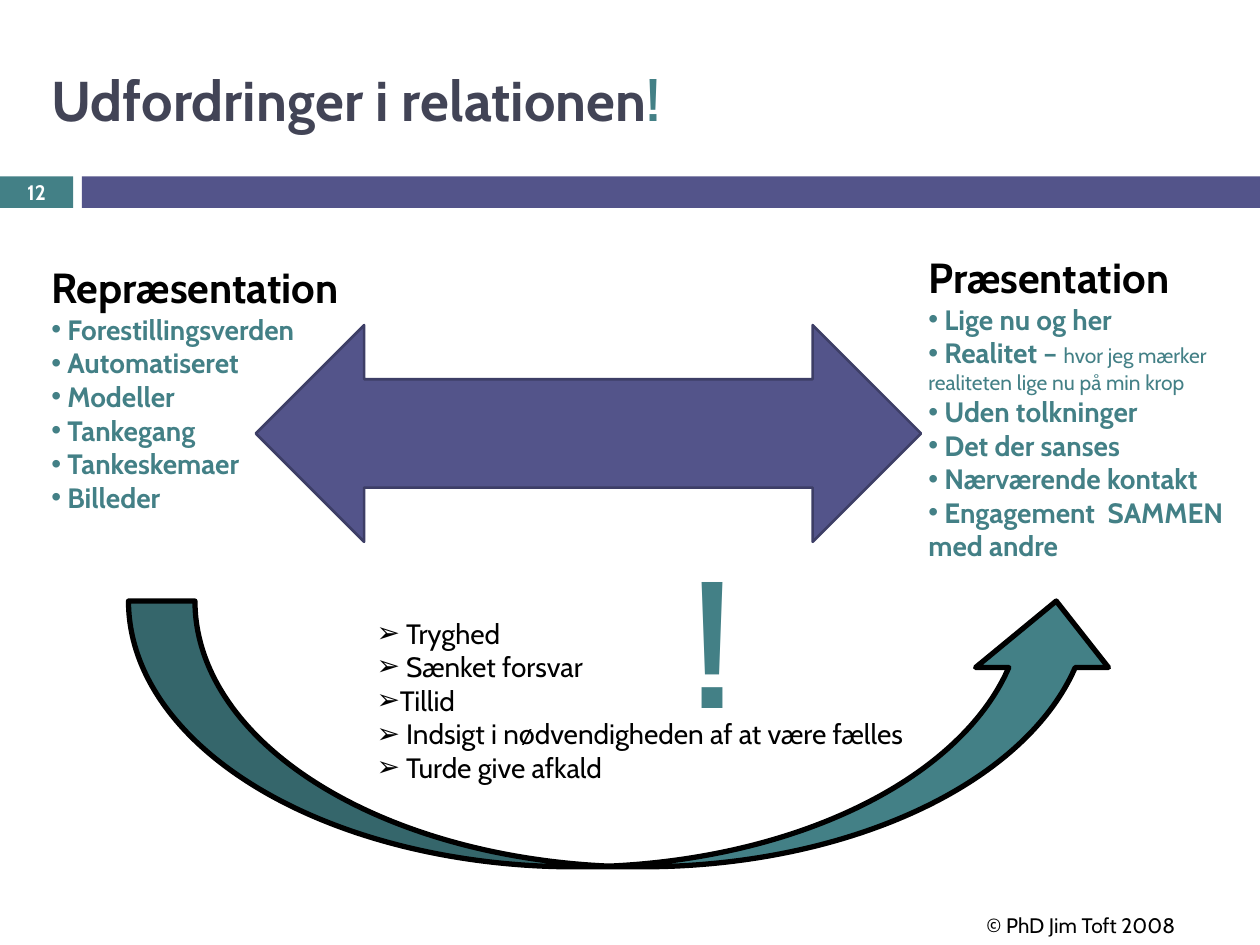
from dataclasses import dataclass

from lxml.etree import SubElement
from pptx import Presentation
from pptx.dml.color import RGBColor
from pptx.enum.shapes import MSO_SHAPE
from pptx.enum.text import MSO_ANCHOR, MSO_AUTO_SIZE, PP_ALIGN
from pptx.oxml.ns import qn
from pptx.util import Inches, Pt


@dataclass(frozen=True)
class Theme:
    font: str = "Cabin"
    teal: RGBColor = RGBColor.from_string("438086")
    violet: RGBColor = RGBColor.from_string("53548A")
    edge: RGBColor = RGBColor.from_string("3D3E66")
    ink: RGBColor = RGBColor.from_string("424456")
    black: RGBColor = RGBColor.from_string("000000")
    white: RGBColor = RGBColor.from_string("FFFFFF")
    title: Pt = Pt(32)
    head: Pt = Pt(24)
    body: Pt = Pt(16)
    small: Pt = Pt(12)
    mark: Pt = Pt(96)


theme = Theme()
title = dict(size=theme.title, bold=True, color=theme.ink)
accent = title | dict(color=theme.teal)
number = dict(size=theme.small, bold=True, color=theme.white)
head = dict(size=theme.head, bold=True, color=theme.black)
item = dict(size=theme.body, bold=True, color=theme.teal)
aside = dict(size=theme.small, bold=False, color=theme.teal)
point = dict(size=theme.body, bold=False, color=theme.black)
credit = point | dict(size=theme.small)
mark = item | dict(size=theme.mark)

deck = Presentation()
deck.slide_width, deck.slide_height = Inches(10), Inches(7.5)
slide = deck.slides.add_slide(deck.slide_layouts[6])
shapes = slide.shapes


def draw(kind, place, fill, line=None, width=0):
    shape = shapes.add_shape(kind, *map(Inches, place))
    shape.shadow.inherit = False
    shape.fill.solid()
    shape.fill.fore_color.rgb = fill
    if line is None:
        shape.line.fill.background()
    else:
        shape.line.color.rgb = line
        shape.line.width = Pt(width)
    return shape


def write(frame, lines, **look):
    """Fill a frame with lines, each a bullet (or None) and its (text, format) runs."""
    for name, value in (dict(word_wrap=True) | look).items():
        setattr(frame, name, value)
    for row, (bullet, runs) in enumerate(lines):
        para = frame.add_paragraph() if row else frame.paragraphs[0]
        if bullet:
            props = para._p.get_or_add_pPr()
            SubElement(props, qn("a:buFont"), typeface="Arial")
            SubElement(props, qn("a:buChar"), char=bullet)
        for text, style in runs:
            run = para.add_run()
            run.text = text
            run.font.name = theme.font
            for name, value in style.items():
                if name == "color":
                    run.font.color.rgb = value
                else:
                    setattr(run.font, name, value)


# Title band
badge = draw(MSO_SHAPE.RECTANGLE, (0, 1.4, 0.58, 0.25), theme.teal)
write(badge.text_frame, [(None, [("12", number)])], margin_top=0, margin_bottom=0,
      vertical_anchor=MSO_ANCHOR.MIDDLE)
badge.text_frame.paragraphs[0].alignment = PP_ALIGN.CENTER
draw(MSO_SHAPE.RECTANGLE, (0.65, 1.4, 9.35, 0.25), theme.violet)

box = shapes.add_textbox(*map(Inches, (0.31, 0.25, 9.45, 1.08)))
write(box.text_frame, [(None, [("Udfordringer i relationen", title), ("!", accent)])],
      vertical_anchor=MSO_ANCHOR.MIDDLE)

# Arrows; the straight one stops short of the right list's bullets
draw(MSO_SHAPE.LEFT_RIGHT_ARROW, (2.03, 2.58, 5.28, 1.72), theme.violet, theme.edge, 1.5)
draw(MSO_SHAPE.CURVED_UP_ARROW, (1.02, 4.77, 7.89, 2.11), theme.teal, theme.black, 3)

# Lists and notes
inner = ["Forestillingsverden", "Automatiseret", "Modeller", "Tankegang",
         "Tankeskemaer", "Billeder"]
outer = ["Uden tolkninger", "Det der sanses", "Nærværende kontakt",
         "Engagement  SAMMEN med andre"]
needs = [" Tryghed", " Sænket forsvar", "Tillid",
         " Indsigt i nødvendigheden af at være fælles", " Turde give afkald"]

left = [(None, [("Repræsentation", head)])]
left += [("•", [(f" {text}", item)]) for text in inner]
right = [
    (None, [("Præsentation", head)]),
    ("•", [(" Lige nu og her", item)]),
    ("•", [(" Realitet – ", item),
           ("hvor jeg mærker realiteten lige nu på min krop", aside)]),
]
right += [("•", [(f" {text}", item)]) for text in outer]

# The large mark stands clear above the long line of needs
texts = [
    ((0.31, 2.03, 2.89, 2.39), left),
    ((7.27, 1.95, 2.73, 2.99), right),
    ((2.89, 4.84, 4.69, 1.45), [("➢", [(text, point)]) for text in needs]),
    ((5.39, 4.24, 1.25, 1.72), [(None, [("!", mark)])]),
    ((7.73, 7.19, 1.88, 0.31), [(None, [("© PhD Jim Toft 2008", credit)])]),
]
for place, lines in texts:
    box = shapes.add_textbox(*map(Inches, place))
    write(box.text_frame, lines, auto_size=MSO_AUTO_SIZE.SHAPE_TO_FIT_TEXT)

deck.save("out.pptx")
